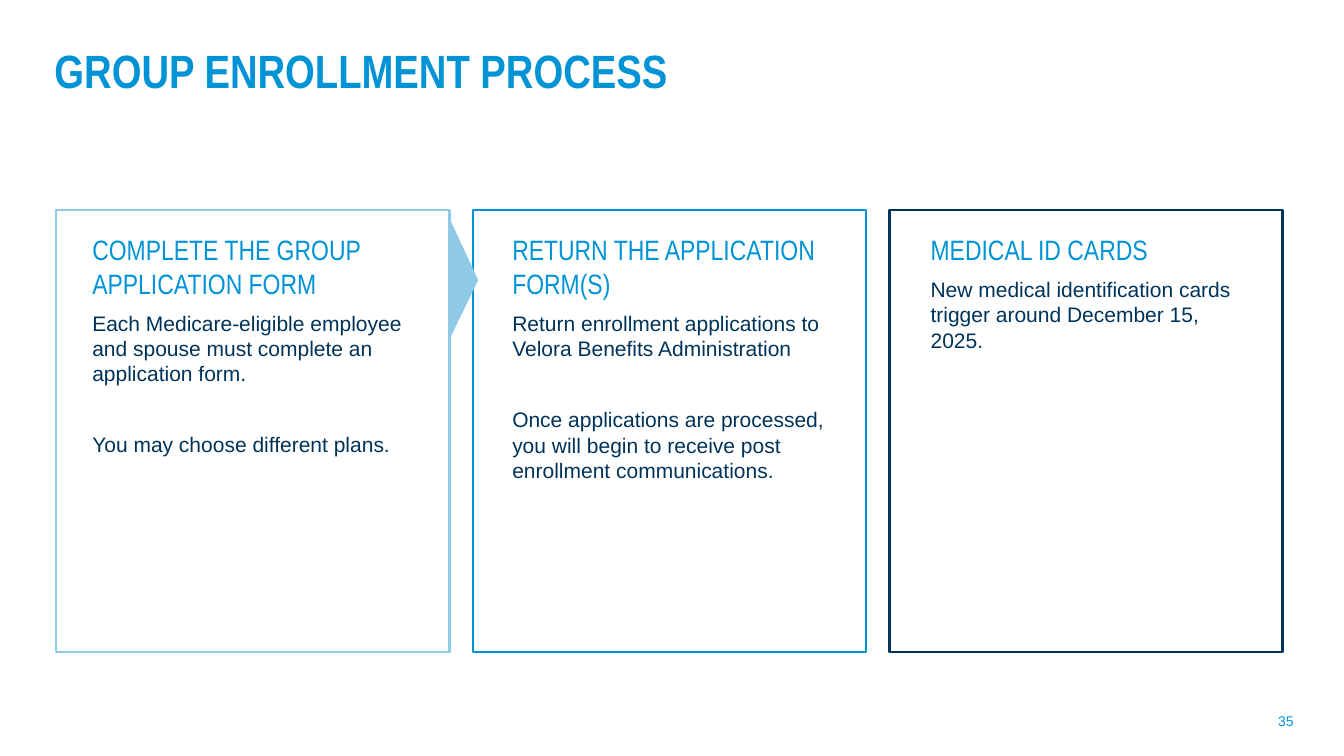
from pptx import Presentation
from pptx.dml.color import RGBColor
from pptx.enum.shapes import MSO_SHAPE
from pptx.enum.text import MSO_ANCHOR, PP_ALIGN
from pptx.util import Inches, Pt

COLORS = {"blue": "0094D7", "sky": "8FCAE7", "navy": "003359"}
TITLE = "GROUP ENROLLMENT PROCESS"
PAGE = "35"
STEPS = [
    ("sky", 1, 2.8, "COMPLETE THE GROUP APPLICATION FORM",
     ["Each Medicare-eligible employee and spouse must complete an application form.",
      "You may choose different plans."]),
    ("blue", 6, 3.11, "RETURN THE APPLICATION FORM(S)",
     ["Return enrollment applications to Velora Benefits Administration",
      "Once applications are processed, you will begin to receive post enrollment communications."]),
    ("navy", 10.98, 1.54, "MEDICAL ID CARDS",
     ["New medical identification cards trigger around December 15, 2025."]),
]
STYLES = {
    "title": ({"name": "Arial Narrow", "size": Pt(40), "bold": True}, "blue"),
    "heading": ({"name": "Arial Narrow", "size": Pt(24)}, "blue"),
    "body": ({"name": "Arial", "size": Pt(18)}, "navy"),
    "page": ({"name": "Arial", "size": Pt(12)}, "blue"),
}
CARD_LEFT, CARD_TOP, CARD_W, CARD_H, CARD_PITCH = 0.67, 2.5, 4.68, 5.26, 4.96
TEXT_TOP, TEXT_W = 2.72, 4.02
FIRST_GAP, BLOCK_GAP = 9, 39.5


def rgb(name):
    return RGBColor.from_string(COLORS[name])


def add_text(s, box, paragraphs):
    tf = s.shapes.add_textbox(*map(Inches, box)).text_frame
    tf.word_wrap = True
    for i, (text, style, fmt) in enumerate(paragraphs):
        p = tf.add_paragraph() if i else tf.paragraphs[0]
        for key, value in fmt.items():
            setattr(p, key, value)
        r = p.add_run()
        r.text = text
        font, color = STYLES[style]
        for key, value in font.items():
            setattr(r.font, key, value)
        r.font.color.rgb = rgb(color)
    return tf


def add_outline(s, kind, box, color, width):
    sp = s.shapes.add_shape(kind, *map(Inches, box))
    sp.shadow.inherit = False
    sp.fill.background()
    sp.line.color.rgb = rgb(color)
    sp.line.width = Pt(width)
    return sp


def main():
    prs = Presentation()
    prs.slide_width, prs.slide_height = Inches(16), Inches(9)
    s = prs.slides.add_slide(prs.slide_layouts[6])

    tf = add_text(s, (14.94, 8.34, 0.56, 0.48),
                  [(PAGE, "page", {"alignment": PP_ALIGN.RIGHT})])
    tf.vertical_anchor = MSO_ANCHOR.MIDDLE
    add_text(s, (0.55, 0.53, 10.32, 1.23), [(TITLE, "title", {"line_spacing": 0.9})])

    for i, (color, left, height, heading, blocks) in enumerate(STEPS):
        add_outline(s, MSO_SHAPE.RECTANGLE,
                    (CARD_LEFT + i * CARD_PITCH, CARD_TOP, CARD_W, CARD_H), color, 2)
        paragraphs = [(heading, "heading", {})]
        for j, block in enumerate(blocks):
            gap = BLOCK_GAP if j else FIRST_GAP
            paragraphs.append((block, "body", {"space_before": Pt(gap)}))
        add_text(s, (left, TEXT_TOP, TEXT_W, height), paragraphs)

    arrow = add_outline(s, MSO_SHAPE.ISOSCELES_TRIANGLE, (4.85, 3.16, 1.35, 0.32), "sky", 1)
    arrow.rotation = 90
    arrow.adjustments[0] = 0.51
    arrow.fill.solid()
    arrow.fill.fore_color.rgb = rgb("sky")

    prs.save("out.pptx")


if __name__ == "__main__":
    main()
